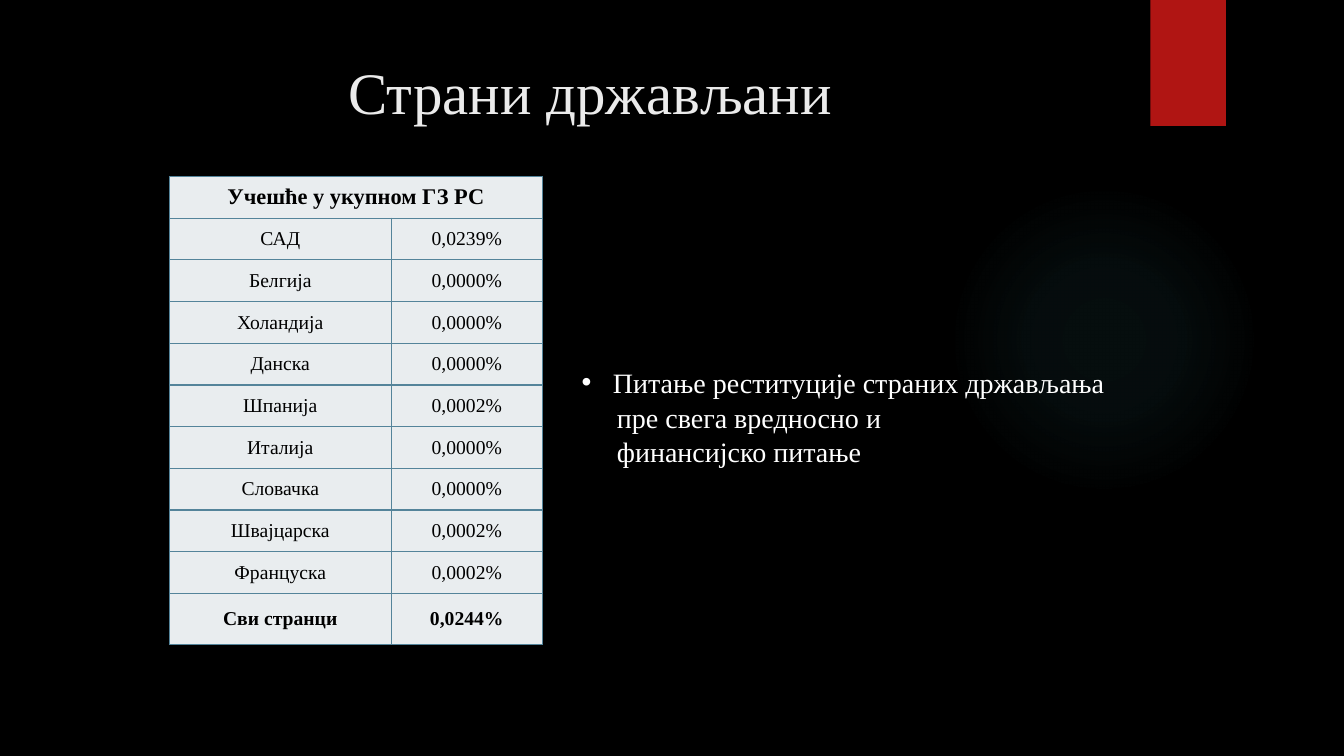
from lxml import etree
from pptx import Presentation
from pptx.dml.color import RGBColor
from pptx.enum.shapes import MSO_SHAPE
from pptx.enum.text import MSO_ANCHOR, MSO_AUTO_SIZE, PP_ALIGN
from pptx.oxml import parse_xml
from pptx.oxml.ns import nsdecls, qn
from pptx.util import Inches, Pt

OVAL, RECT = MSO_SHAPE.OVAL, MSO_SHAPE.RECTANGLE
MIDDLE, CENTER = MSO_ANCHOR.MIDDLE, PP_ALIGN.CENTER
GROW = MSO_AUTO_SIZE.SHAPE_TO_FIT_TEXT
BLACK = RGBColor(0, 0, 0)
WHITE = RGBColor(255, 255, 255)
PALE = RGBColor(0xEB, 0xEB, 0xEB)
RED = RGBColor(0xB0, 0x15, 0x13)
TEAL = RGBColor(0x50, 0xB9, 0xC1)
STEEL = RGBColor(0x54, 0x84, 0x9A)
MIST = RGBColor(0xE9, 0xED, 0xEF)
FONT = "Times New Roman"

HEAD = "Учешће у укупном ГЗ РС"
SHARES = [
    ("САД", "0,0239%"),
    ("Белгија", "0,0000%"),
    ("Холандија", "0,0000%"),
    ("Данска", "0,0000%"),
    ("Шпанија", "0,0002%"),
    ("Италија", "0,0000%"),
    ("Словачка", "0,0000%"),
    ("Швајцарска", "0,0002%"),
    ("Француска", "0,0002%"),
    ("Сви странци", "0,0244%"),
]
POINTS = [
    "Питање реституције страних држављања",
    "пре свега вредносно и",
    "финансијско питање",
]


def style(par, size, color, bold=False):
    font = par.font
    font.name, font.size, font.bold = FONT, Pt(size), bold
    font.color.rgb = color


def add_plain(slide, kind, box):
    shape = slide.shapes.add_shape(kind, *map(Inches, box))
    shape.shadow.inherit = False
    shape.line.fill.background()
    return shape


def add_glow(slide, box):
    glow = add_plain(slide, OVAL, box)
    glow.fill.background()
    stops = "".join(
        f'<a:gs pos="{pos * 1000}"><a:srgbClr val="{TEAL}">'
        f'<a:alpha val="{alpha * 1000}"/></a:srgbClr></a:gs>'
        for pos, alpha in [(0, 7), (36, 6), (69, 0), (100, 0)]
    )
    grad = parse_xml(
        f'<a:gradFill {nsdecls("a")}><a:gsLst>{stops}</a:gsLst>'
        '<a:path path="circle"><a:fillToRect l="50000" t="50000" '
        'r="50000" b="50000"/></a:path></a:gradFill>'
    )
    props = glow.element.spPr
    props.replace(props.find(qn("a:noFill")), grad)


def add_ribbon(slide, box):
    ribbon = add_plain(slide, RECT, box)
    ribbon.fill.solid()
    ribbon.fill.fore_color.rgb = RED


def add_title(slide, box, text):
    frame = slide.shapes.add_textbox(*map(Inches, box)).text_frame
    frame.word_wrap = True
    par = frame.paragraphs[0]
    par.text, par.alignment = text, CENTER
    style(par, 42, PALE)


def add_border(cell):
    props = cell._tc.get_or_add_tcPr()
    for side in "LRTB":
        line = etree.SubElement(props, qn(f"a:ln{side}"), w=str(Pt(1)))
        fill = etree.SubElement(line, qn("a:solidFill"))
        etree.SubElement(fill, qn("a:srgbClr"), val=str(STEEL))


def fill_cell(cell, text, size, bold):
    add_border(cell)
    cell.fill.solid()
    cell.fill.fore_color.rgb = MIST
    cell.margin_left = cell.margin_right = 0
    cell.margin_top = cell.margin_bottom = 0
    cell.vertical_anchor = MIDDLE
    par = cell.text_frame.paragraphs[0]
    par.text, par.alignment = text, CENTER
    style(par, size, BLACK, bold)


def add_shares(slide, box):
    rows = [(HEAD, "")] + SHARES
    last = len(rows) - 1
    table = slide.shapes.add_table(len(rows), 2, *map(Inches, box)).table
    for col, width in zip(table.columns, (2.2, 1.5)):
        col.width = Inches(width)
    for i, row in enumerate(rows):
        table.rows[i].height = Inches(0.51 if i == last else 0.414)
        for j, text in enumerate(row):
            fill_cell(table.cell(i, j), text, 14 if i else 16, i in (0, last))
    table.cell(0, 0).merge(table.cell(0, 1))


def add_points(slide, box):
    frame = slide.shapes.add_textbox(*map(Inches, box)).text_frame
    frame.word_wrap = False
    frame.auto_size = GROW
    for i, text in enumerate(POINTS):
        par = frame.add_paragraph() if i else frame.paragraphs[0]
        par.text = text
        par.line_spacing = 1.04
        props = par._p.get_or_add_pPr()
        props.set("marL", str(Inches(0.35 if i else 0.31)))
        props.set("indent", str(Inches(0 if i else -0.31)))
        if i == 0:
            etree.SubElement(props, qn("a:buFont"), typeface="Arial")
            etree.SubElement(props, qn("a:buChar"), char="•")
        style(par, 20, WHITE)


def main():
    deck = Presentation()
    deck.slide_width, deck.slide_height = Inches(13.33), Inches(7.5)
    slide = deck.slides.add_slide(deck.slide_layouts[6])
    slide.background.fill.solid()
    slide.background.fill.fore_color.rgb = BLACK
    add_glow(slide, (9.41, 1.83, 3.08, 3.08))
    add_ribbon(slide, (11.41, 0, 0.75, 1.25))
    add_title(slide, (0.71, 0.5, 10.29, 1.53), "Страни држављани")
    add_shares(slide, (1.68, 1.75, 3.7, 4.66))
    add_points(slide, (5.67, 3.56, 5.44, 1.11))
    deck.save("out.pptx")


if __name__ == "__main__":
    main()
